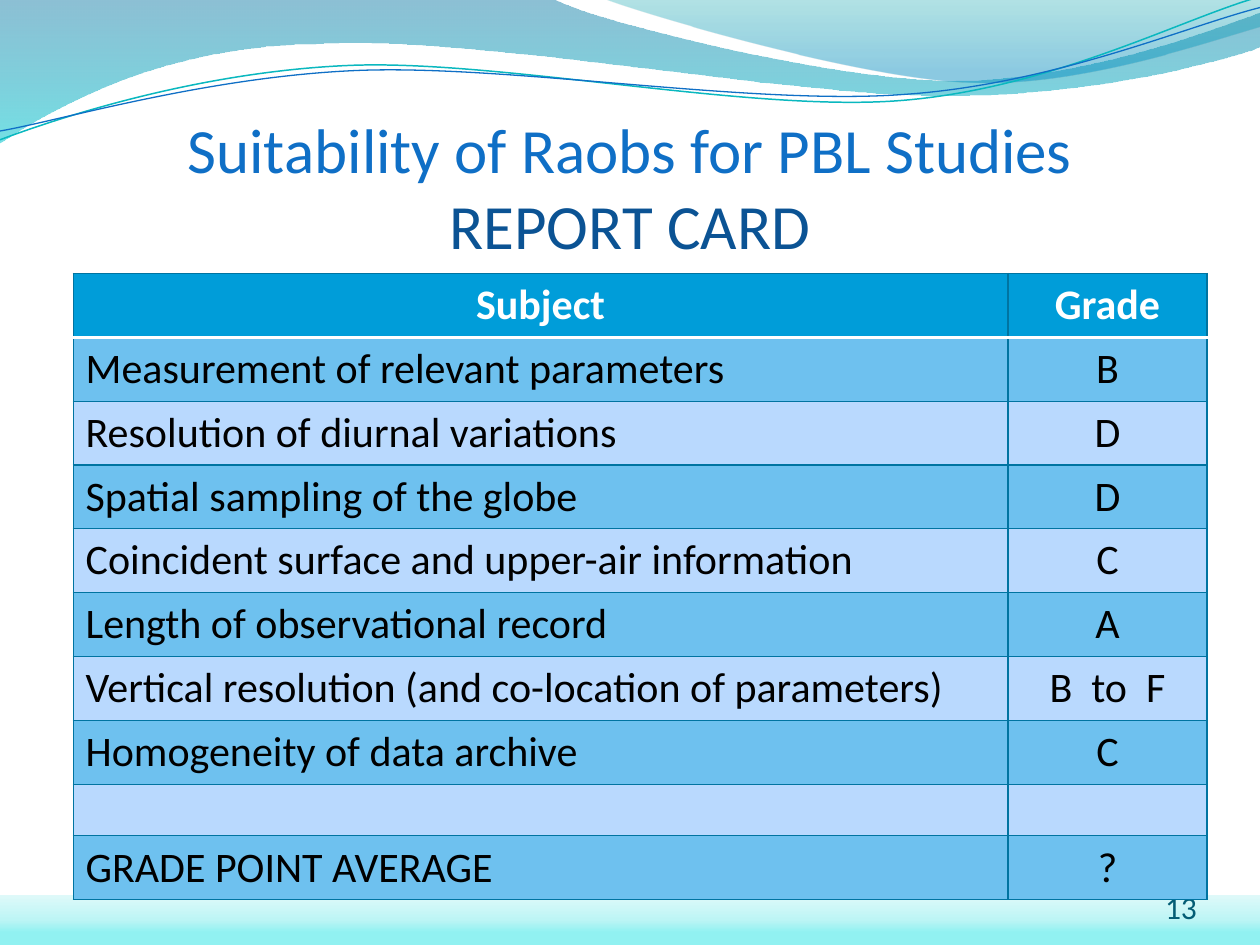
from lxml import etree
from pptx import Presentation
from pptx.dml.color import RGBColor
from pptx.enum import shapes, text
from pptx.oxml import parse_xml
from pptx.oxml.ns import nsdecls, qn
from pptx.util import Inches, Pt

FONT = "Calibri"
BORDER = "0074A1"
HEADER_FILL, DARK_BAND, LIGHT_BAND = "009DD9", "6EC1EF", "B9D9FE"

GRADES = [
    ("Subject", "Grade"),
    ("Measurement of relevant parameters", "B"),
    ("Resolution of diurnal variations", "D"),
    ("Spatial sampling of the globe", "D"),
    ("Coincident surface and upper-air information", "C"),
    ("Length of observational record", "A"),
    ("Vertical resolution (and co-location of parameters)", "B  to  F"),
    ("Homogeneity of data archive", "C"),
    ("", ""),
    ("GRADE POINT AVERAGE", "?"),
]

WIDE_WAVE = [
    [(0, 0)], [(4.4, 0)],
    [(4.76, 0.18), (6.64, 0.64), (7.58, 0.64)],
    [(8.53, 0.64), (9.58, 0.26), (10, 0.1)], [(10.01, 0.37)],
    [(9.83, 0.45), (8.7, 0.77), (7.46, 0.76)],
    [(6.22, 0.76), (3.82, 0.29), (2.57, 0.35)],
    [(1.29, 0.36), (0.46, 0.84), (-0.01, 1.14)], [(0, 0)],
]
RIGHT_WAVE = [
    [(4.79, -0.01)],
    [(5.09, 0.11), (6.82, 0.62), (7.69, 0.65)],
    [(8.56, 0.69), (9.61, 0.32), (10, 0.21)], [(10, 0)], [(4.79, -0.01)],
]
TEAL_CURVE = [
    [(0, 1.11)],
    [(0.48, 0.93), (1.58, 0.57), (2.77, 0.52)],
    [(3.95, 0.47), (5.93, 0.89), (7.13, 0.8)],
    [(8.33, 0.71), (9.38, 0.15), (9.98, -0.02)],
]
BLUE_CURVE = [
    [(0, 1.04)],
    [(0.47, 0.96), (1.64, 0.61), (2.83, 0.56)],
    [(4.03, 0.51), (5.97, 0.84), (7.17, 0.75)],
    [(8.36, 0.67), (9.41, 0.21), (10, 0.06)],
]


def rgb(color):
    return RGBColor.from_string(color)


def style_run(r, size, color, bold=False):
    r.font.name, r.font.size, r.font.bold = FONT, Pt(size), bold
    r.font.color.rgb = rgb(color)


def set_insets(tf, top=0):
    tf.margin_left = tf.margin_right = tf.margin_bottom = 0
    tf.margin_top = Inches(top)


def bend_segments(sp, outline):
    lines = iter(list(sp._element.iter(qn("a:lnTo"))))
    for segment in outline[1:]:
        group = [next(lines) for _ in segment]
        if len(group) == 3:
            curve = etree.Element(qn("a:cubicBezTo"))
            group[0].addprevious(curve)
            for line in group:
                curve.append(line[0])
                line.getparent().remove(line)


def add_outline(s, outline, close):
    points = [(Inches(x), Inches(y)) for segment in outline for x, y in segment]
    builder = s.shapes.build_freeform(*points[0])
    builder.add_line_segments(points[1:], close=close)
    sp = builder.convert_to_shape()
    bend_segments(sp, outline)
    sp.shadow.inherit = False
    sp.fill.background()
    return sp


def fill_gradient(sp, stops, angle):
    sp.fill.background()
    sp.line.fill.background()
    grad = parse_xml(f'<a:gradFill {nsdecls("a")} rotWithShape="1"><a:gsLst/>'
                     f'<a:lin ang="{angle * 60000}" scaled="0"/></a:gradFill>')
    for pos, color, alpha in stops:
        gs = etree.SubElement(grad[0], qn("a:gs"), pos=str(pos * 1000))
        clr = etree.SubElement(gs, qn("a:srgbClr"), val=color)
        if alpha < 100:
            etree.SubElement(clr, qn("a:alpha"), val=str(alpha * 1000))
    props = sp._element.spPr
    props.replace(props.find(qn("a:noFill")), grad)


def add_wave(s, outline, stops):
    fill_gradient(add_outline(s, outline, True), stops, 90)


def add_curve(s, outline, color, width):
    sp = add_outline(s, outline, False)
    sp.line.color.rgb = rgb(color)
    sp.line.width = Pt(width)


def add_footer_band(s):
    sp = s.shapes.add_shape(shapes.MSO_SHAPE.RECTANGLE, 0, Inches(7.1), Inches(10), Inches(0.4))
    sp.shadow.inherit = False
    fill_gradient(sp, [(25, "91F1F1", 100), (50, "BDF5F5", 100), (100, "DFF9F9", 100)], 270)


def add_title(s):
    sp = s.shapes.title
    s.shapes._spTree.append(sp._element)
    sp.left, sp.top, sp.width, sp.height = map(Inches, (0.5, 0.83, 9, 1.25))
    tf = sp.text_frame
    tf.text = "Suitability of Raobs for PBL Studies\vREPORT CARD"
    tf.auto_size = text.MSO_AUTO_SIZE.NONE
    tf.vertical_anchor = text.MSO_ANCHOR.BOTTOM
    set_insets(tf, 0.05)
    p = tf.paragraphs[0]
    p.alignment = text.PP_ALIGN.CENTER
    for r, color in zip(p.runs, ("0F6FC6", "0B5394")):
        style_run(r, 36, color)


def add_page_number(s, number):
    sp = s.shapes.add_textbox(*map(Inches, (8.67, 6.95, 0.83, 0.4)))
    tf = sp.text_frame
    tf.word_wrap = True
    tf.vertical_anchor = text.MSO_ANCHOR.BOTTOM
    set_insets(tf)
    p = tf.paragraphs[0]
    p.text = number
    p.alignment = text.PP_ALIGN.RIGHT
    style_run(p.runs[0], 18, "045D75")


def set_borders(cell, row):
    rule = ("FFFFFF", 2)
    special = {(0, "B"): rule, (1, "T"): rule}
    props = cell._tc.get_or_add_tcPr()
    for index, side in enumerate("LRTB"):
        color, width = special.get((row, side), (BORDER, 0.75))
        props.insert(index, parse_xml(
            f'<a:ln{side} {nsdecls("a")} w="{Pt(width)}"><a:solidFill>'
            f'<a:srgbClr val="{color}"/></a:solidFill></a:ln{side}>'))


def add_report_card(s):
    frame = s.shapes.add_table(len(GRADES), 2, *map(Inches, (0.58, 2.17, 9, 4.91)))
    table = frame.table
    for column, width in zip(table.columns, (7.42, 1.58)):
        column.width = Inches(width)
    for row, entries in enumerate(GRADES):
        table.rows[row].height = Pt(36.5) if any(entries) else Inches(0.41)
        band = HEADER_FILL if row == 0 else DARK_BAND if row % 2 else LIGHT_BAND
        for col, entry in enumerate(entries):
            cell = table.cell(row, col)
            cell.fill.solid()
            cell.fill.fore_color.rgb = rgb(band)
            set_borders(cell, row)
            if not entry:
                continue
            p = cell.text_frame.paragraphs[0]
            p.text = entry
            centred = row == 0 or col == 1
            p.alignment = text.PP_ALIGN.CENTER if centred else text.PP_ALIGN.LEFT
            style_run(p.runs[0], 24, "000000" if row else "FFFFFF", row == 0)


def main():
    prs = Presentation()
    prs.slide_width, prs.slide_height = Inches(10), Inches(7.5)
    s = prs.slides.add_slide(prs.slide_layouts[5])
    add_footer_band(s)
    add_wave(s, WIDE_WAVE, [(0, "0074A1", 45), (100, "00C6CF", 55)])
    add_wave(s, RIGHT_WAVE, [(0, "00A1A9", 30), (80, "008BBF", 45)])
    add_curve(s, TEAL_CURVE, "0AB8BF", 0.85)
    add_curve(s, BLUE_CURVE, "0F6FC6", 0.75)
    add_title(s)
    add_page_number(s, "13")
    add_report_card(s)
    prs.save("out.pptx")


if __name__ == "__main__":
    main()
